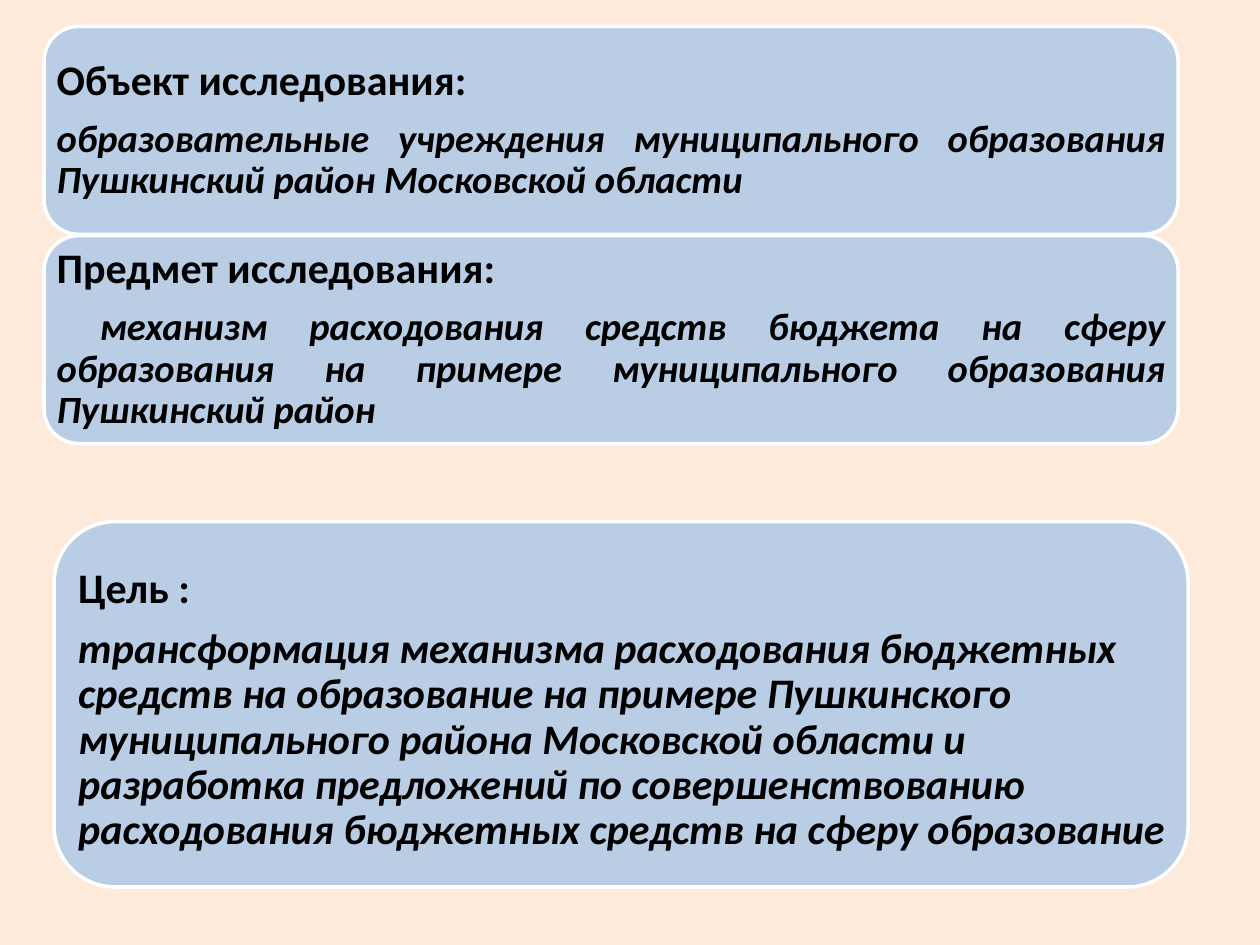
import pptx
import pptx.util
import pptx.dml.color
import pptx.enum.shapes
import pptx.enum.text
from dataclasses import dataclass

Pt = pptx.util.Pt
Inches = pptx.util.Inches
Align = pptx.enum.text.PP_ALIGN
Anchor = pptx.enum.text.MSO_ANCHOR


@dataclass
class Theme:
    back: str = "FDEADA"
    card: str = "B9CDE5"
    edge: str = "FFFFFF"
    ink: str = "000000"
    font: str = "Calibri"
    head: int = 24
    body: int = 22
    goal: int = 24
    gap: float = 8.4


class Deck:
    """Slide with a grid of 100 columns by 75 rows."""

    def __init__(self, theme):
        self.theme = theme
        self.prs = pptx.Presentation()
        self.prs.slide_width = Inches(10)
        self.prs.slide_height = Inches(7.5)
        self.slide = self.prs.slides.add_slide(self.prs.slide_layouts[6])
        self.paint(self.slide.background.fill, theme.back)

    def col(self, n):
        return round(self.prs.slide_width * n / 100)

    def row(self, n):
        return round(self.prs.slide_height * n / 75)

    def paint(self, fill, tone):
        fill.solid()
        fill.fore_color.rgb = pptx.dml.color.RGBColor.from_string(tone)

    def card(self, x, y, w, h, pad, top=None):
        """Rounded card; its text is centred unless a top inset is given."""
        box = self.slide.shapes.add_shape(
            pptx.enum.shapes.MSO_SHAPE.ROUNDED_RECTANGLE,
            self.col(x), self.row(y), self.col(w), self.row(h))
        box.shadow.inherit = False
        self.paint(box.fill, self.theme.card)
        self.paint(box.line.fill, self.theme.edge)
        box.line.width = Pt(2)
        frame = box.text_frame
        frame.word_wrap = True
        frame.margin_left = frame.margin_right = self.col(pad)
        frame.margin_top = self.row(pad if top is None else top)
        frame.margin_bottom = self.row(pad)
        frame.vertical_anchor = Anchor.MIDDLE if top is None else Anchor.TOP
        return frame

    def label(self, frame, head, body, size, align, indent=0):
        """Put a heading and an italic statement into a card."""
        last = frame.add_paragraph()
        rows = (frame.paragraphs[0], head, self.theme.head), (last, body, size)
        for para, text, pts in rows:
            para.text = text
            para.alignment = align
            para.line_spacing = 0.9
            para.space_after = Pt(self.theme.gap)
            font = para.font
            font.name, font.size, font.bold = self.theme.font, Pt(pts), True
            self.paint(font.fill, self.theme.ink)
        last.font.italic = True
        if indent:
            last._p.get_or_add_pPr().set("indent", str(self.col(indent)))

    def save(self):
        self.prs.save("out.pptx")


TOPICS = [
    ("Объект исследования:",
     "образовательные учреждения муниципального образования "
     "Пушкинский район Московской области", 0),
    ("Предмет исследования:",
     "механизм расходования средств бюджета на сферу образования "
     "на примере муниципального образования Пушкинский район", 3.4),
]
GOAL = ("Цель :",
        "трансформация механизма расходования бюджетных средств на "
        "образование на примере Пушкинского муниципального района "
        "Московской области и разработка предложений по совершенствованию "
        "расходования бюджетных средств на сферу образование")


def main():
    theme = Theme()
    deck = Deck(theme)
    for n, (head, body, indent) in enumerate(TOPICS):
        frame = deck.card(3.5, 2.1 + 16.6 * n, 90, 16.5, pad=0.2)
        deck.label(frame, head, body, theme.body, Align.JUSTIFY, indent)
    frame = deck.card(4.3, 41.4, 90, 29, pad=0.5, top=2.2)
    frame.margin_right = 0
    deck.label(frame, *GOAL, theme.goal, Align.LEFT)
    deck.save()


if __name__ == "__main__":
    main()
